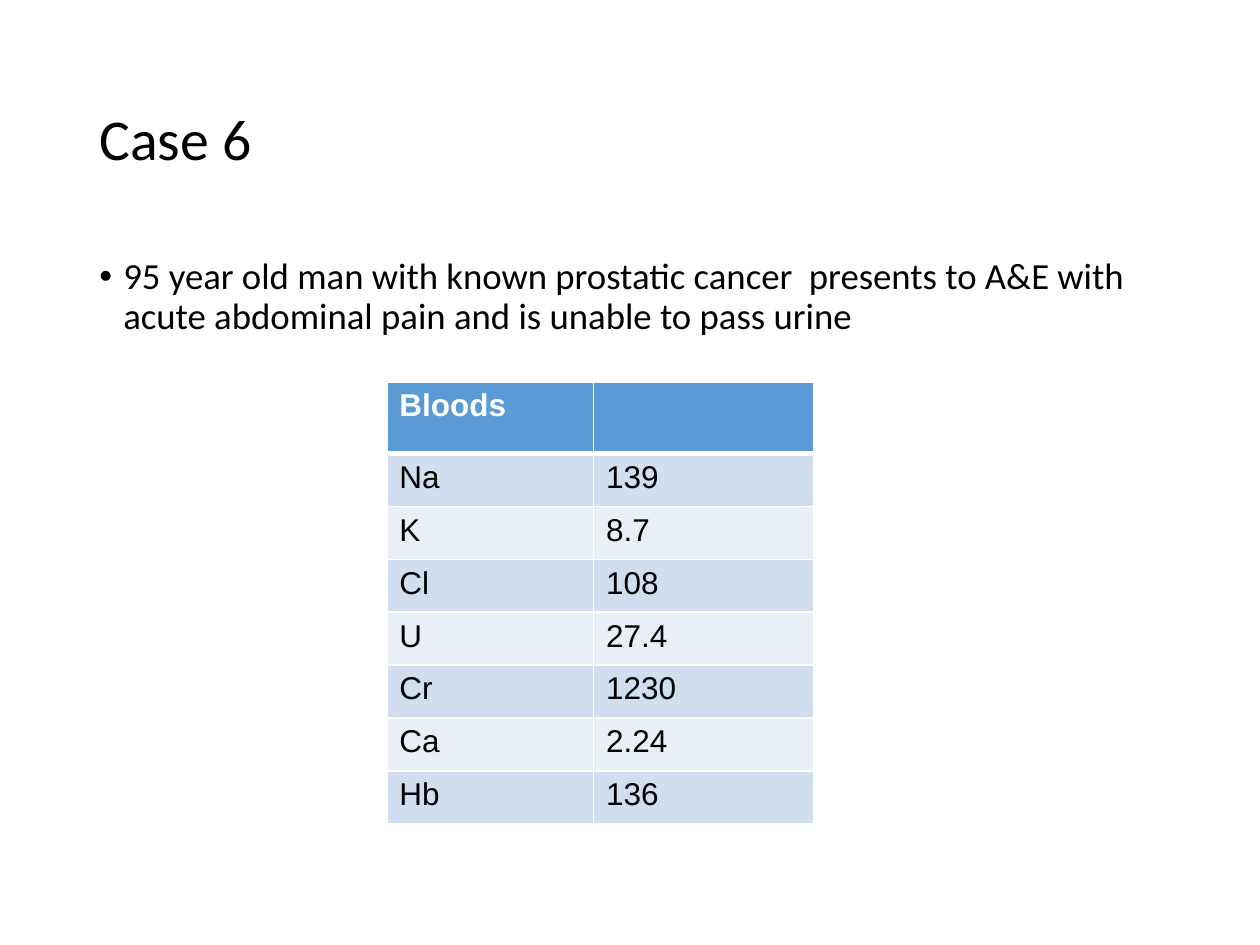
from typing import NamedTuple

from lxml import etree
from pptx import Presentation
from pptx.dml.color import RGBColor
from pptx.enum.text import MSO_ANCHOR, PP_ALIGN
from pptx.oxml.ns import qn
from pptx.util import Inches, Pt

LEFT, MIDDLE = PP_ALIGN.LEFT, MSO_ANCHOR.MIDDLE
BLACK = RGBColor(0x00, 0x00, 0x00)
WHITE = RGBColor(0xFF, 0xFF, 0xFF)
HEADER_BLUE = RGBColor(0x5B, 0x9B, 0xD5)
BAND_DARK = RGBColor(0xD0, 0xDE, 0xEF)
BAND_LIGHT = RGBColor(0xE9, 0xEF, 0xF7)

MARGIN, CONTENT_WIDTH = Inches(0.69), Inches(8.62)
COLUMN_WIDTHS = (Inches(1.64), Inches(1.75))
HEADER_HEIGHT, ROW_HEIGHT = Inches(0.57), Inches(0.42)


class BloodTest(NamedTuple):
    name: str
    result: str


BLOOD_TESTS = [
    BloodTest("Na", "139"),
    BloodTest("K", "8.7"),
    BloodTest("Cl", "108"),
    BloodTest("U", "27.4"),
    BloodTest("Cr", "1230"),
    BloodTest("Ca", "2.24"),
    BloodTest("Hb", "136"),
]


def style_paragraph(paragraph, font_name: str, size: float, color: RGBColor,
                    bold: bool = False) -> None:
    paragraph.alignment = LEFT
    for run in paragraph.runs:
        run.font.name = font_name
        run.font.size = Pt(size)
        run.font.bold = bold
        run.font.color.rgb = color


def add_bullet(paragraph, indent: int) -> None:
    properties = paragraph._p.get_or_add_pPr()
    properties.set("marL", str(indent))
    properties.set("indent", str(-indent))
    etree.SubElement(properties, qn("a:buFont"), typeface="Arial")
    etree.SubElement(properties, qn("a:buChar"), char="•")


def set_borders(cell, bottom: float = 1, top: float = 1) -> None:
    """Give the cell white borders; call before the fill is set."""
    properties = cell._tc.get_or_add_tcPr()
    for side, width in (("L", 1), ("R", 1), ("T", top), ("B", bottom)):
        line = etree.SubElement(properties, qn(f"a:ln{side}"), w=str(Pt(width)))
        fill = etree.SubElement(line, qn("a:solidFill"))
        etree.SubElement(fill, qn("a:srgbClr"), val=str(WHITE))


def add_title(slide, text: str) -> None:
    title = slide.shapes.title
    title.left, title.top = MARGIN, Inches(0.4)
    title.width, title.height = CONTENT_WIDTH, Inches(1.45)
    frame = title.text_frame
    frame.text = text
    frame.vertical_anchor = MIDDLE
    frame.paragraphs[0].line_spacing = 0.9
    style_paragraph(frame.paragraphs[0], "Calibri", 33, BLACK)


def add_history(slide, text: str) -> None:
    history = slide.shapes.add_textbox(MARGIN, Inches(2), CONTENT_WIDTH, Inches(4.76))
    frame = history.text_frame
    frame.word_wrap = True
    frame.text = text
    paragraph = frame.paragraphs[0]
    paragraph.line_spacing = 0.9
    add_bullet(paragraph, Inches(0.19))
    style_paragraph(paragraph, "Calibri", 21, BLACK)


def add_bloods_table(slide, tests: list[BloodTest]) -> None:
    rows = [BloodTest("Bloods", ""), *tests]
    table = slide.shapes.add_table(
        len(rows), len(COLUMN_WIDTHS), Inches(3.07), Inches(3.03),
        sum(COLUMN_WIDTHS), HEADER_HEIGHT + ROW_HEIGHT * len(tests)).table
    for column, width in zip(table.columns, COLUMN_WIDTHS):
        column.width = width
    for row_index, values in enumerate(rows):
        is_header = row_index == 0
        table.rows[row_index].height = HEADER_HEIGHT if is_header else ROW_HEIGHT
        band = BAND_DARK if row_index % 2 else BAND_LIGHT
        for column_index, value in enumerate(values):
            cell = table.cell(row_index, column_index)
            set_borders(cell, bottom=3 if is_header else 1,
                        top=3 if row_index == 1 else 1)
            cell.fill.solid()
            cell.fill.fore_color.rgb = HEADER_BLUE if is_header else band
            cell.text_frame.text = value
            style_paragraph(cell.text_frame.paragraphs[0], "Arial", 18,
                            WHITE if is_header else BLACK, bold=is_header)


def main() -> None:
    presentation = Presentation()
    presentation.slide_width, presentation.slide_height = Inches(10), Inches(7.5)
    slide = presentation.slides.add_slide(presentation.slide_layouts[5])
    add_title(slide, "Case 6")
    add_history(slide, "95 year old man with known prostatic cancer  presents to A&E "
                       "with acute abdominal pain and is unable to pass urine")
    add_bloods_table(slide, BLOOD_TESTS)
    presentation.save("out.pptx")


if __name__ == "__main__":
    main()
